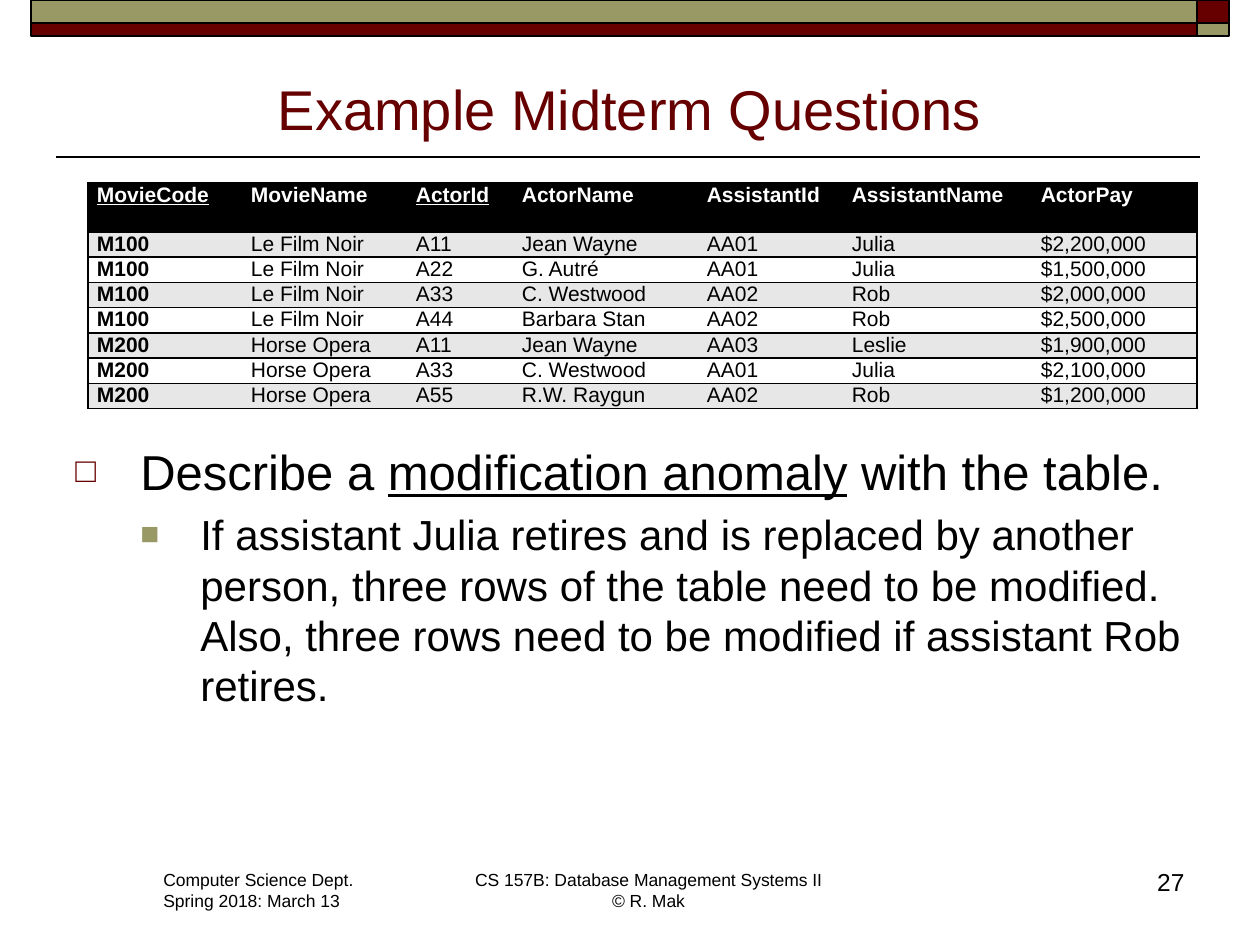
from copy import deepcopy

from lxml import etree
from pptx import Presentation
from pptx.dml.color import RGBColor
from pptx.enum.shapes import MSO_CONNECTOR, MSO_SHAPE
from pptx.enum.text import MSO_ANCHOR, MSO_AUTO_SIZE, PP_ALIGN
from pptx.oxml.ns import qn
from pptx.util import Emu, Pt

STRAIGHT = MSO_CONNECTOR.STRAIGHT
RECTANGLE = MSO_SHAPE.RECTANGLE
TOP, BOTTOM = MSO_ANCHOR.TOP, MSO_ANCHOR.BOTTOM
FIT_SHAPE, NO_FIT = MSO_AUTO_SIZE.SHAPE_TO_FIT_TEXT, MSO_AUTO_SIZE.NONE
LEFT, CENTER, RIGHT = PP_ALIGN.LEFT, PP_ALIGN.CENTER, PP_ALIGN.RIGHT

BLACK = RGBColor(0x00, 0x00, 0x00)
WHITE = RGBColor(0xFF, 0xFF, 0xFF)
MAROON = RGBColor(0x66, 0x00, 0x00)
OLIVE = RGBColor(0x99, 0x99, 0x66)
BAND = RGBColor(0xE7, 0xE7, 0xE7)

PX_PER_INCH = 126
FONT = "Arial"

COLUMNS = ["MovieCode", "MovieName", "ActorId", "ActorName",
           "AssistantId", "AssistantName", "ActorPay"]
KEYS = {"MovieCode", "ActorId"}
COLUMN_WIDTHS = [154, 165, 106, 185, 145, 189, 165]
HEADER_HEIGHT, ROW_HEIGHT = 49, 24
MOVIES = [
    ("M100", "Le Film Noir", "A11", "Jean Wayne", "AA01", "Julia", "$2,200,000"),
    ("M100", "Le Film Noir", "A22", "G. Autré", "AA01", "Julia", "$1,500,000"),
    ("M100", "Le Film Noir", "A33", "C. Westwood", "AA02", "Rob", "$2,000,000"),
    ("M100", "Le Film Noir", "A44", "Barbara Stan", "AA02", "Rob", "$2,500,000"),
    ("M200", "Horse Opera", "A11", "Jean Wayne", "AA03", "Leslie", "$1,900,000"),
    ("M200", "Horse Opera", "A33", "C. Westwood", "AA01", "Julia", "$2,100,000"),
    ("M200", "Horse Opera", "A55", "R.W. Raygun", "AA02", "Rob", "$1,200,000"),
]
QUESTION = [("Describe a ", False), ("modification anomaly", True),
            (" with the table.", False)]
ANSWER = [("If assistant Julia retires and is replaced by another person, "
           "three rows of the table need to be modified. Also, three rows "
           "need to be modified if assistant Rob retires.", False)]


def px(length):
    return Emu(round(length * 914400 / PX_PER_INCH))


class SlideBuilder:
    def __init__(self, slide):
        self.slide = slide
        self.font = {"name": FONT, "bold": False, "underline": False}

    def style(self, run, size, color=BLACK, **changes):
        values = {**self.font, "size": Pt(size), **changes}
        for name, value in values.items():
            setattr(run.font, name, value)
        run.font.color.rgb = color

    def rule(self, x1, y1, x2, y2):
        line = self.slide.shapes.add_connector(
            STRAIGHT, px(x1), px(y1), px(x2), px(y2))
        line.line.color.rgb = BLACK
        line.line.width = Pt(1)
        etree.SubElement(line._element.spPr, qn("a:effectLst"))

    def bar(self, x, y, width, height, fill):
        bar = self.slide.shapes.add_shape(
            RECTANGLE, px(x), px(y), px(width), px(height))
        bar.shadow.inherit = False
        bar.fill.solid()
        bar.fill.fore_color.rgb = fill
        bar.line.color.rgb = BLACK
        bar.line.width = Pt(1)

    def frame(self, x, y, width, height, **values):
        frame = self.slide.shapes.add_textbox(
            px(x), px(y), px(width), px(height)).text_frame
        settings = {"word_wrap": True, "auto_size": NO_FIT,
                    "vertical_anchor": TOP, **values}
        for name, value in settings.items():
            setattr(frame, name, value)
        return frame

    def text(self, box, lines, size, color=BLACK, align=LEFT, **values):
        frame = self.frame(*box, **values)
        frame.text = lines
        for paragraph in frame.paragraphs:
            paragraph.alignment = align
            for run in paragraph.runs:
                self.style(run, size, color)
            for line_break in paragraph._p.findall(qn("a:br")):
                line_break.append(deepcopy(paragraph.runs[0].font._element))

    def bullet(self, paragraph, pieces, size, level, margin, hang, mark, color, percent):
        properties = paragraph._p.get_or_add_pPr()
        properties.set("marL", str(px(margin)))
        properties.set("indent", str(-px(hang)))
        tint = etree.SubElement(properties, qn("a:buClr"))
        etree.SubElement(tint, qn("a:srgbClr"), val=str(color))
        etree.SubElement(properties, qn("a:buSzPct"), val=str(percent * 1000))
        etree.SubElement(properties, qn("a:buFont"), typeface=FONT)
        etree.SubElement(properties, qn("a:buChar"), char=mark)
        paragraph.level = level
        for words, underlined in pieces:
            run = paragraph.add_run()
            run.text = words
            self.style(run, size, underline=underlined)

    def border(self, cell, drawn):
        properties = cell._tc.get_or_add_tcPr()
        for place, side in enumerate("LRTB"):
            line = etree.Element(qn(f"a:ln{side}"), w=str(Pt(1)))
            if side in drawn:
                fill = etree.SubElement(line, qn("a:solidFill"))
                etree.SubElement(fill, qn("a:srgbClr"), val=str(BLACK))
            else:
                etree.SubElement(line, qn("a:noFill"))
            properties.insert(place, line)

    def cell(self, cell, words, fill, color, drawn, **changes):
        margins = {"margin_left": px(9), "margin_right": px(9),
                   "margin_top": 0, "margin_bottom": 0}
        for name, value in margins.items():
            setattr(cell, name, value)
        cell.fill.solid()
        cell.fill.fore_color.rgb = fill
        cell.text = words
        self.style(cell.text_frame.paragraphs[0].runs[0], 12, color, **changes)
        self.border(cell, drawn)

    def table(self, x, y, header, records):
        rows = [header, *records]
        height = HEADER_HEIGHT + ROW_HEIGHT * len(records)
        table = self.slide.shapes.add_table(
            len(rows), len(header), px(x), px(y),
            px(sum(COLUMN_WIDTHS)), px(height)).table
        for column, width in zip(table.columns, COLUMN_WIDTHS):
            column.width = px(width)
        for r, record in enumerate(rows):
            is_header = r == 0
            table.rows[r].height = px(HEADER_HEIGHT if is_header else ROW_HEIGHT)
            fill = BLACK if is_header else BAND if r % 2 else WHITE
            for c, words in enumerate(record):
                drawn = "TB" + "L" * (c == 0) + "R" * (c == len(header) - 1)
                self.cell(table.cell(r, c), words, fill,
                          WHITE if is_header else BLACK, drawn,
                          bold=is_header or c == 0,
                          underline=is_header and words in KEYS)


def main():
    deck = Presentation()
    deck.slide_width, deck.slide_height = px(1260), px(945)
    page = SlideBuilder(deck.slides.add_slide(deck.slide_layouts[6]))

    page.rule(1200, 157, 56, 157)
    for y, height, wide_fill, corner_fill in [(0, 23, OLIVE, MAROON),
                                              (23, 13, MAROON, OLIVE)]:
        page.bar(31, y, 1166, height, wide_fill)
        page.bar(1197, y, 32, height, corner_fill)

    footer = {"word_wrap": False, "auto_size": FIT_SHAPE}
    page.text((151, 863, 226, 55),
              "Computer Science Dept.\nSpring 2018: March 13", 10, **footer)
    page.text((461, 863, 375, 55),
              "CS 157B: Database Management Systems II\v© R. Mak", 10,
              align=CENTER, **footer)
    page.text((63, 57, 1134, 91), "Example Midterm Questions", 32, MAROON,
              CENTER, vertical_anchor=BOTTOM)

    body = page.frame(63, 435, 1134, 410)
    page.bullet(body.paragraphs[0], QUESTION, 28, 0, 65, 65, "□", MAROON, 70)
    answer = body.add_paragraph()
    page.bullet(answer, ANSWER, 24, 1, 125, 60, "■", OLIVE, 75)
    answer.space_before = Pt(5)

    page.text((1096, 861, 101, 63), "27", 14, align=RIGHT)
    page.table(88, 183, COLUMNS, MOVIES)
    deck.save("out.pptx")


if __name__ == "__main__":
    main()
